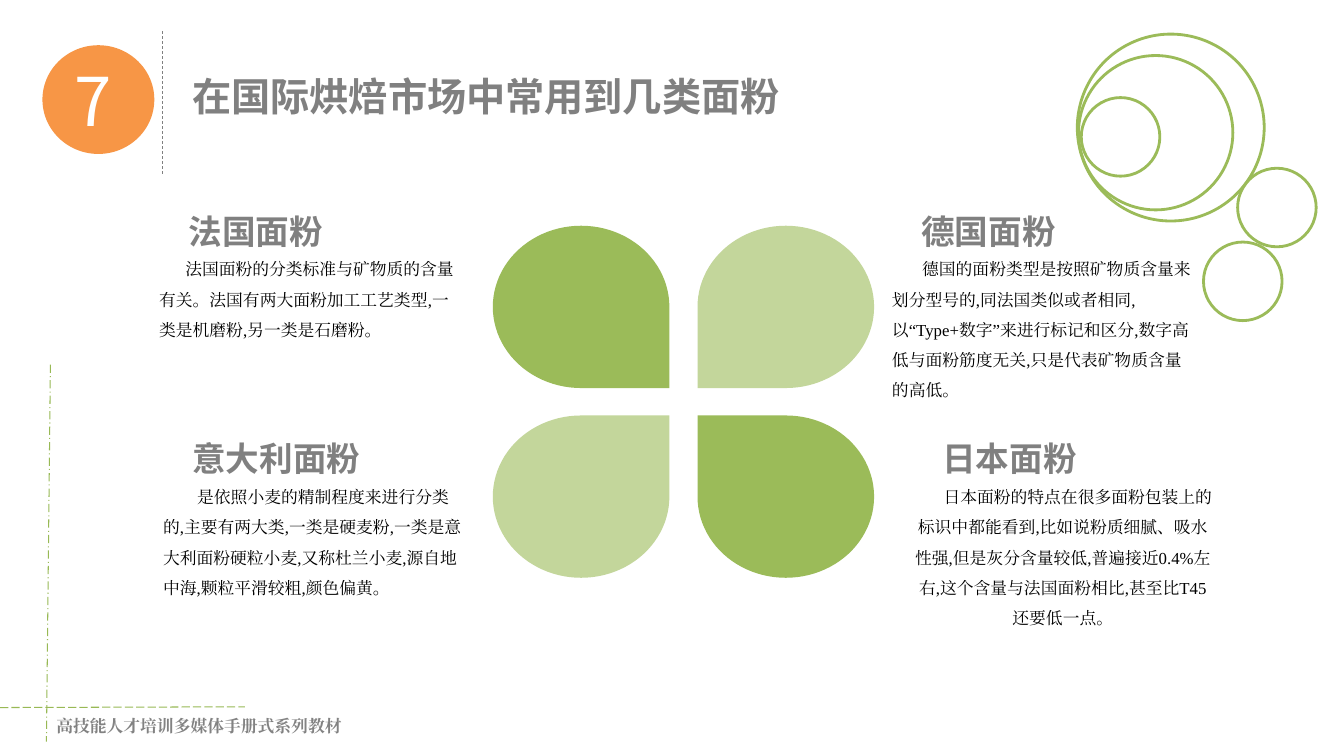
import pptx
import pptx.dml.color
import pptx.enum.dml
import pptx.enum.shapes
import pptx.enum.text
import pptx.oxml
import pptx.oxml.ns
import pptx.util

Cm = pptx.util.Cm
Shapes = pptx.enum.shapes.MSO_SHAPE
Dashes = pptx.enum.dml.MSO_LINE
Align = pptx.enum.text.PP_ALIGN


class Theme:
    green = "9BBB59"
    pale_green = "C3D69B"
    guide_green = "98B955"
    orange = "F79646"
    gray = "808080"
    footer_gray = "828282"
    white = "FFFFFF"
    black = "000000"
    heading_font = "Noto Sans CJK SC"
    body_font = "Times New Roman"
    number_size = 48
    title_size = 28
    heading_size = 24
    body_size = 12
    ring_width = 2


def rgb(color):
    return pptx.dml.color.RGBColor.from_string(color)


class SlideBuilder:
    def __init__(self, slide, theme):
        self.shapes = slide.shapes
        self.theme = theme

    def line(self, start, end, color, width, dash):
        connector = self.shapes.add_connector(
            pptx.enum.shapes.MSO_CONNECTOR.STRAIGHT,
            Cm(start[0]), Cm(start[1]), Cm(end[0]), Cm(end[1]))
        connector.line.color.rgb = rgb(color)
        connector.line.width = pptx.util.Pt(width)
        connector.line.dash_style = dash
        effects = pptx.oxml.parse_xml(
            f"<a:effectLst {pptx.oxml.ns.nsdecls('a')}/>")
        connector._element.spPr.append(effects)

    def shape(self, preset, left, top, width, height, fill=None, outline=None, flips=""):
        """Add a filled or outlined shape; flips holds H and/or V."""
        shape = self.shapes.add_shape(preset, Cm(left), Cm(top), Cm(width), Cm(height))
        shape.shadow.inherit = False
        if fill:
            shape.fill.solid()
            shape.fill.fore_color.rgb = rgb(fill)
        else:
            shape.fill.background()
        if outline:
            shape.line.color.rgb = rgb(outline)
            shape.line.width = pptx.util.Pt(self.theme.ring_width)
        else:
            shape.line.fill.background()
        for axis in flips:
            shape._element.spPr.xfrm.set(f"flip{axis}", "1")

    def text(self, left, top, width, height, words, font, size, color, bold=False,
             wrap=True, align=Align.LEFT, spacing=None, indent=0):
        box = self.shapes.add_textbox(Cm(left), Cm(top), Cm(width), Cm(height))
        frame = box.text_frame
        frame.word_wrap = wrap
        frame.auto_size = pptx.enum.text.MSO_AUTO_SIZE.SHAPE_TO_FIT_TEXT
        para = frame.paragraphs[0]
        para.alignment = align
        if spacing:
            para.line_spacing = spacing
        if indent:
            para._p.get_or_add_pPr().set("indent", str(Cm(indent)))
        span = para.add_run()
        span.text = words
        span.font.name = font
        span.font.size = pptx.util.Pt(size)
        span.font.bold = bold
        span.font.color.rgb = rgb(color)
        east_asian = pptx.oxml.parse_xml(
            f'<a:ea {pptx.oxml.ns.nsdecls("a")} typeface="{font}"/>')
        span.font._element.append(east_asian)

    def flour(self, left, top, lines, indent, name, description, align=Align.LEFT):
        """Add a flour's heading and the description below it."""
        theme = self.theme
        self.text(left + 0.74, top - 0.97, 6.58, 1.28, name, theme.heading_font,
                  theme.heading_size, theme.gray, bold=True)
        self.text(left, top, 8.05, 0.25 + 0.77 * lines, description, theme.body_font,
                  theme.body_size, theme.black, align=align, spacing=1.5, indent=indent)


RINGS = [  # left, top, diameter
    (27.15, 0.86, 4.71),
    (27.18, 1.4, 3.89),
    (31.19, 4.24, 1.98),
    (27.25, 2.46, 1.98),
    (30.33, 6.1, 1.98),
]

FLOURS = [  # left, top, line count, first-line indent, name, description, alignment
    (3.76, 6.15, 3, 0.66, "法国面粉",
     "法国面粉的分类标准与矿物质的含量有关。法国有两大面粉加工工艺类型,一类是机磨粉,"
     "另一类是石磨粉。", Align.LEFT),
    (22.23, 6.15, 5, 0.76, "德国面粉",
     "德国的面粉类型是按照矿物质含量来划分型号的,同法国类似或者相同,以“Type+数字”来进行"
     "标记和区分,数字高低与面粉筋度无关,只是代表矿物质含量的高低。", Align.LEFT),
    (3.86, 11.89, 4, 0.86, "意大利面粉",
     "是依照小麦的精制程度来进行分类的,主要有两大类,一类是硬麦粉,一类是意大利面粉硬粒小麦,"
     "又称杜兰小麦,源自地中海,颗粒平滑较粗,颜色偏黄。", Align.LEFT),
    (22.76, 11.89, 5, 0.76, "日本面粉",
     "日本面粉的特点在很多面粉包装上的标识中都能看到,比如说粉质细腻、吸水性强,但是灰分含量"
     "较低,普遍接近0.4%左右,这个含量与法国面粉相比,甚至比T45还要低一点。", Align.CENTER),
]


def main():
    deck = pptx.Presentation()
    deck.slide_width, deck.slide_height = Cm(33.87), Cm(19.05)
    theme = Theme()
    page = SlideBuilder(deck.slides.add_slide(deck.slide_layouts[6]), theme)

    page.line((1.27, 9.19), (1.17, 18.69), theme.guide_green, 0.75, Dashes.LONG_DASH_DOT)
    page.line((0, 17.83), (6.17, 17.81), theme.guide_green, 0.75, Dashes.LONG_DASH)
    page.text(1.17, 17.91, 7.77, 0.76, "高技能人才培训多媒体手册式系列教材", theme.body_font,
              theme.body_size, theme.footer_gray, bold=True, wrap=False)
    for left, top, diameter in RINGS:
        page.shape(Shapes.OVAL, left, top, diameter, diameter, outline=theme.green)

    page.line((4.09, 0.79), (4.09, 4.42), theme.gray, 0.5, Dashes.DASH)
    page.shape(Shapes.OVAL, 1.07, 1.14, 2.82, 2.74, fill=theme.orange)
    page.text(1.63, 1.37, 1.85, 2.31, "7", theme.heading_font, theme.number_size, theme.white)
    page.text(4.6, 1.7, 21.34, 1.45, "在国际烘焙市场中常用到几类面粉", theme.heading_font,
              theme.title_size, theme.gray, bold=True)

    for row, vertical in enumerate(("V", "")):
        for column, horizontal in enumerate(("", "H")):
            fill = theme.green if row == column else theme.pale_green
            page.shape(Shapes.TEAR, 12.42 + 5.16 * column, 5.69 + 4.78 * row, 4.45, 4.09,
                       fill=fill, flips=horizontal + vertical)
    for flour in FLOURS:
        page.flour(*flour)

    deck.save("out.pptx")


if __name__ == "__main__":
    main()
